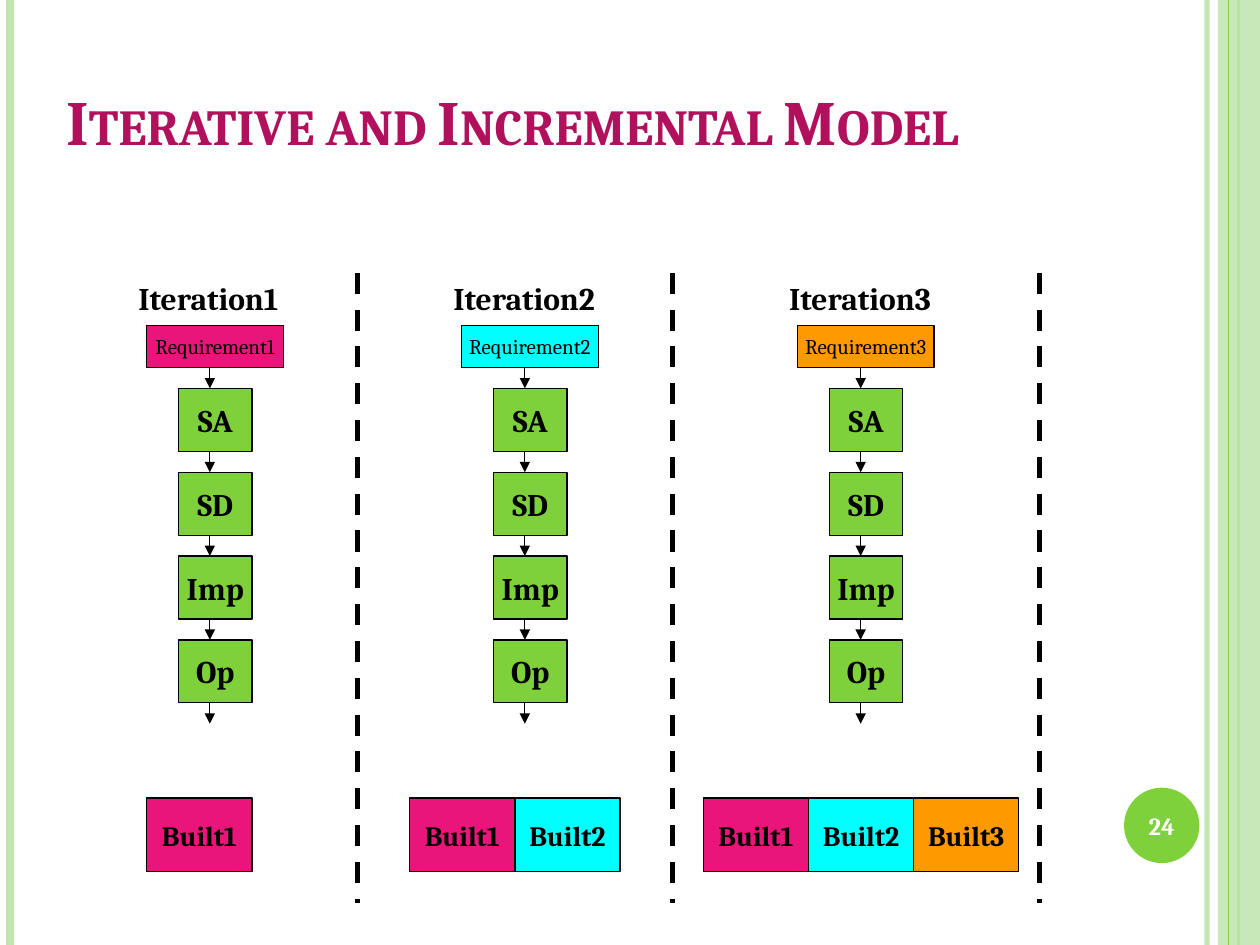
from lxml import etree
from pptx import Presentation
from pptx.dml.color import RGBColor
from pptx.enum.dml import MSO_LINE
from pptx.enum.shapes import MSO_CONNECTOR, MSO_SHAPE
from pptx.enum.text import MSO_ANCHOR, MSO_AUTO_SIZE, PP_ALIGN
from pptx.oxml.ns import qn
from pptx.util import Cm, Pt

BLACK = RGBColor(0x00, 0x00, 0x00)
WHITE = RGBColor(0xFF, 0xFF, 0xFF)
GREEN = RGBColor(0x7F, 0xD1, 0x3B)
PALE_GREEN = RGBColor(0xC0, 0xE5, 0xAF)
BERRY = RGBColor(0xB0, 0x10, 0x5C)
BUILD_COLORS = [RGBColor(0xEA, 0x15, 0x7A), RGBColor(0x00, 0xFF, 0xFF),
                RGBColor(0xFF, 0x99, 0x00)]

FONT = "Cambria"
STAGES = ["SA", "SD", "Imp", "Op"]
SLIDE_W, SLIDE_H = 25.4, 19.05

# Iterations, all in cm
COLUMN_TOP = 5.5
COLUMN_LEFTS = [2.54, 8.89, 15.66]
DIVIDER_XS = [7.2, 13.55, 20.96]
BUILD_LEFTS = [2.96, 8.26, 14.18]
BUILD_TOP, BUILD_W, BUILD_H = 16.09, 2.12, 1.48
REQUIREMENT_TOP, REQUIREMENT_W, REQUIREMENT_H = 1.06, 2.75, 0.85
STAGE_W, STAGE_H, GAP = 1.48, 1.27, 0.42


def write(shape, text, size, color=BLACK, bold=True, align=PP_ALIGN.CENTER,
          anchor=MSO_ANCHOR.MIDDLE, wrap=False):
    frame = shape.text_frame
    for name, value in {"word_wrap": wrap, "vertical_anchor": anchor}.items():
        setattr(frame, name, value)
    paragraph = frame.paragraphs[0]
    paragraph.alignment = align
    run = paragraph.add_run()
    run.text = text
    for name, value in {"name": FONT, "size": Pt(size), "bold": bold}.items():
        setattr(run.font, name, value)
    run.font.color.rgb = color
    return run


def add_text(slide, box, text, size, **formats):
    label = slide.shapes.add_textbox(*map(Cm, box))
    return label, write(label, text, size, **formats)


def add_block(slide, box, fill, outline=None, kind=MSO_SHAPE.RECTANGLE):
    block = slide.shapes.add_shape(kind, *map(Cm, box))
    block.shadow.inherit = False
    block.fill.solid()
    block.fill.fore_color.rgb = fill
    if outline is None:
        block.line.fill.background()
    else:
        block.line.color.rgb = outline
        block.line.width = Pt(0.75)
    return block


def add_line(slide, x, top, bottom, color=BLACK, width=0.75):
    line = slide.shapes.add_connector(
        MSO_CONNECTOR.STRAIGHT, Cm(x), Cm(top), Cm(x), Cm(bottom))
    line.line.color.rgb = color
    line.line.width = Pt(width)
    etree.SubElement(line._element.spPr, qn("a:effectLst"))
    return line


def add_arrow(slide, x, top, bottom):
    arrow = add_line(slide, x, top, bottom)
    etree.SubElement(arrow.line._get_or_add_ln(), qn("a:tailEnd"), type="triangle")


def set_opacity(shape, percent):
    for color in shape._element.spPr.iter(qn("a:srgbClr")):
        etree.SubElement(color, qn("a:alpha"), val=str(percent * 1000))


def draw_side_bands(slide, width, height):
    inner = add_line(slide, width - 1.07, 0, height, PALE_GREEN, 3)
    set_opacity(inner, 93)
    add_line(slide, 0.2, 0, height, PALE_GREEN, 4.5)
    add_line(slide, width - 0.43, 0, height, GREEN, 1.5)
    band = add_block(slide, (width - 0.85, 0, 0.85, height), PALE_GREEN)
    set_opacity(band, 87)
    add_line(slide, width - 0.64, 0, height, GREEN, 0.75)


def draw_page_number(slide, left, top, diameter):
    add_block(slide, (left, top, diameter, diameter), GREEN, kind=MSO_SHAPE.OVAL)
    add_text(slide, (left - 0.09, top + 0.04, diameter + 0.18, diameter - 0.08),
             "24", 14, color=WHITE, wrap=True)


def draw_title(slide, left, top, width, height):
    _, title = add_text(slide, (left, top, width, height),
                        "Iterative and Incremental Model", 36, color=BERRY,
                        align=PP_ALIGN.LEFT, anchor=MSO_ANCHOR.BOTTOM, wrap=True)
    title.font._element.set("cap", "small")


def draw_iteration(slide, number, left, top):
    # Heading
    heading, _ = add_text(slide, (left, top, 3.78, 1.02), f"Iteration{number}", 18,
                          align=PP_ALIGN.LEFT, anchor=MSO_ANCHOR.TOP)
    heading.text_frame.auto_size = MSO_AUTO_SIZE.SHAPE_TO_FIT_TEXT

    # Requirement
    requirement = add_block(
        slide, (left + 0.42, top + REQUIREMENT_TOP, REQUIREMENT_W, REQUIREMENT_H),
        BUILD_COLORS[number - 1], BLACK)
    write(requirement, f"Requirement{number}", 12, bold=False)

    # Stages, with an arrow into each and one out of the last
    arrow_x = left + 1.69
    arrow_top = top + REQUIREMENT_TOP + REQUIREMENT_H
    for name in STAGES:
        stage_top = arrow_top + GAP
        stage = add_block(slide, (left + 1.06, stage_top, STAGE_W, STAGE_H), GREEN, BLACK)
        write(stage, name, 18)
        add_arrow(slide, arrow_x, arrow_top, stage_top)
        arrow_top = stage_top + STAGE_H
    add_arrow(slide, arrow_x, arrow_top, arrow_top + GAP)


def draw_divider(slide, x, top, height):
    divider = add_line(slide, x, top, top + height, width=3)
    divider.line.dash_style = MSO_LINE.DASH


def draw_builds(slide, count, left, top):
    for index, color in enumerate(BUILD_COLORS[:count]):
        build = add_block(slide, (left + index * BUILD_W, top, BUILD_W, BUILD_H),
                          color, BLACK)
        write(build, f"Built{index + 1}", 16)


def main():
    deck = Presentation()
    deck.slide_width, deck.slide_height = Cm(SLIDE_W), Cm(SLIDE_H)
    slide = deck.slides.add_slide(deck.slide_layouts[6])

    draw_side_bands(slide, SLIDE_W, SLIDE_H)
    draw_page_number(slide, 22.66, 15.88, 1.52)
    draw_title(slide, 1.09, 0.53, 23.06, 2.79)

    columns = zip(COLUMN_LEFTS, DIVIDER_XS, BUILD_LEFTS)
    for number, (left, divider_x, build_left) in enumerate(columns, start=1):
        draw_iteration(slide, number, left, COLUMN_TOP)
        draw_divider(slide, divider_x, COLUMN_TOP, 12.7)
        draw_builds(slide, number, build_left, BUILD_TOP)

    deck.save("out.pptx")


if __name__ == "__main__":
    main()
